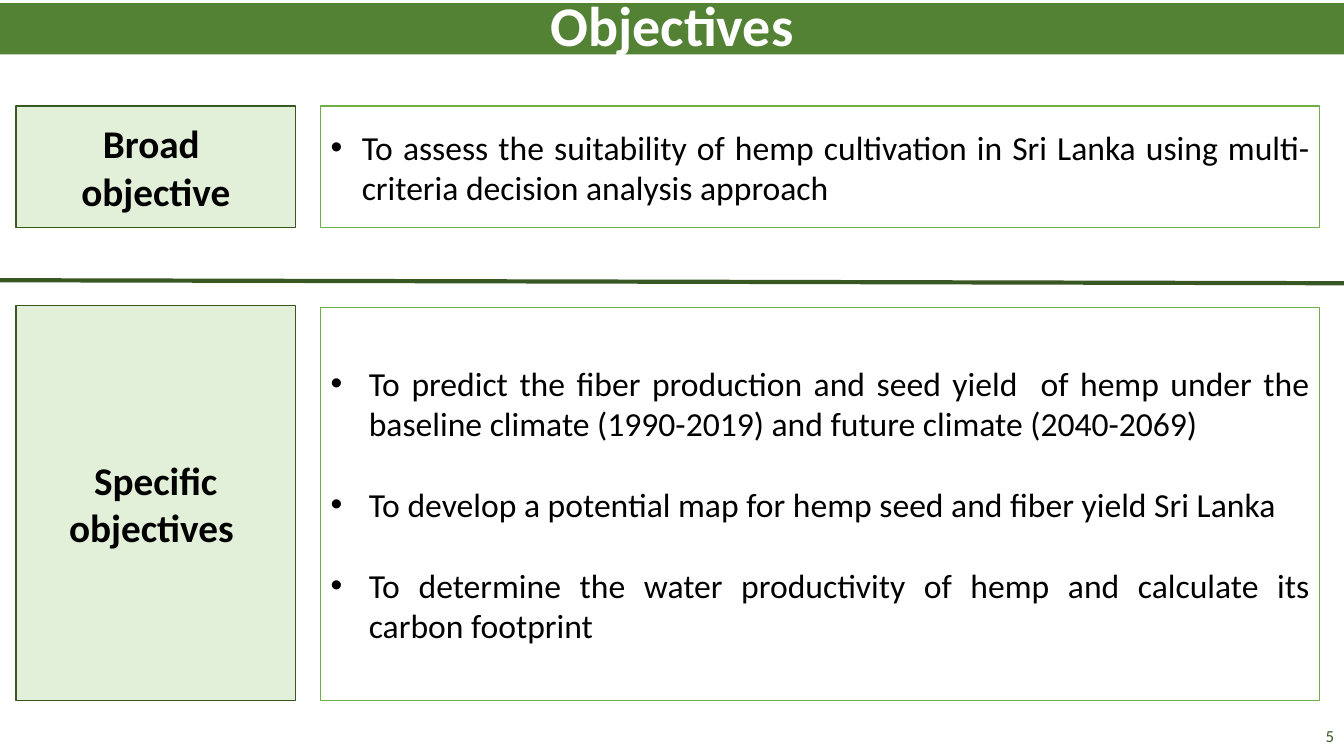
from lxml.etree import SubElement
from pptx import Presentation
from pptx.dml.color import RGBColor
from pptx.enum.shapes import MSO_CONNECTOR, MSO_SHAPE
from pptx.enum.text import MSO_ANCHOR, PP_ALIGN
from pptx.oxml.ns import qn
from pptx.util import Inches, Pt


def color(value):
    return RGBColor.from_string(value)


class ObjectivesSlide:
    """Holds the slide and its green style, and draws each kind of element."""

    font = "Calibri"
    dark, deep, bright, pale = "385723", "548235", "70AD47", "E2F0D9"
    black, white = "000000", "FFFFFF"

    def __init__(self, slide):
        self.slide = slide

    def add_text(self, paragraph, text, size, ink, align, bold=False):
        paragraph.alignment = align
        run = paragraph.add_run()
        run.text = text
        run.font.name = self.font
        run.font.size = Pt(size)
        run.font.bold = bold
        run.font.color.rgb = color(ink)

    def panel(self, left, top, width, height, fill=None, outline=None):
        panel = self.slide.shapes.add_shape(
            MSO_SHAPE.RECTANGLE, Inches(left), Inches(top), Inches(width), Inches(height))
        panel.shadow.inherit = False
        if fill:
            panel.fill.solid()
            panel.fill.fore_color.rgb = color(fill)
        else:
            panel.fill.background()
        if outline:
            panel.line.color.rgb = color(outline)
            panel.line.width = Pt(1)
        else:
            panel.line.fill.background()
        frame = panel.text_frame
        frame.word_wrap = True
        frame.vertical_anchor = MSO_ANCHOR.MIDDLE
        return frame

    def title(self, text):
        heading = self.panel(0, 0.03, 13.33, 0.51, self.deep).paragraphs[0]
        heading.line_spacing = 0.9
        self.add_text(heading, text, 40, self.white, PP_ALIGN.CENTER, True)

    def label(self, top, height, lines):
        frame = self.panel(0.16, top, 2.77, height, self.pale, self.dark)
        for index, line in enumerate(lines):
            paragraph = frame.add_paragraph() if index else frame.paragraphs[0]
            self.add_text(paragraph, line, 28, self.black, PP_ALIGN.CENTER, True)

    def bullets(self, top, height, items, indent, fill=None):
        frame = self.panel(3.18, top, 9.91, height, fill, self.bright)
        for index, item in enumerate(items):
            paragraph = frame.add_paragraph() if index else frame.paragraphs[0]
            if index:
                paragraph.space_before = Pt(29)
            properties = paragraph._p.get_or_add_pPr()
            properties.set("marL", str(Inches(indent)))
            properties.set("indent", str(-Inches(indent)))
            SubElement(properties, qn("a:buFont"), typeface="Arial")
            SubElement(properties, qn("a:buChar"), char="•")
            self.add_text(paragraph, item, 24, self.black, PP_ALIGN.JUSTIFY)

    def divider(self, start_y, end_y):
        divider = self.slide.shapes.add_connector(
            MSO_CONNECTOR.STRAIGHT, 0, Inches(start_y), Inches(13.33), Inches(end_y))
        divider.line.color.rgb = color(self.dark)
        divider.line.width = Pt(3)
        SubElement(divider._element.spPr, qn("a:effectLst"))

    def page_number(self, number):
        corner = self.slide.shapes.add_textbox(
            Inches(10.33), Inches(7.1), Inches(3), Inches(0.4))
        frame = corner.text_frame
        frame.word_wrap = True
        frame.vertical_anchor = MSO_ANCHOR.MIDDLE
        self.add_text(frame.paragraphs[0], number, 12, self.dark, PP_ALIGN.RIGHT)


def main():
    deck = Presentation()
    deck.slide_width = Inches(13.33)
    deck.slide_height = Inches(7.5)
    page = ObjectivesSlide(deck.slides.add_slide(deck.slide_layouts[6]))

    page.page_number("5")
    page.divider(2.78, 2.81)
    page.label(1.05, 1.21, ["Broad ", "objective"])
    page.label(3.03, 3.92, ["Specific objectives "])
    page.bullets(1.05, 1.21, [
        "To assess the suitability of hemp cultivation in Sri Lanka using "
        "multi-criteria decision analysis approach",
    ], 0.31)
    page.bullets(3.05, 3.9, [
        "To predict the fiber production and seed yield  of hemp under the "
        "baseline climate (1990-2019) and future climate (2040-2069)",
        "To develop a potential map for hemp seed and fiber yield Sri Lanka",
        "To determine the water productivity of hemp and calculate its carbon footprint",
    ], 0.38, page.white)
    page.title("Objectives")
    deck.save("out.pptx")


if __name__ == "__main__":
    main()
